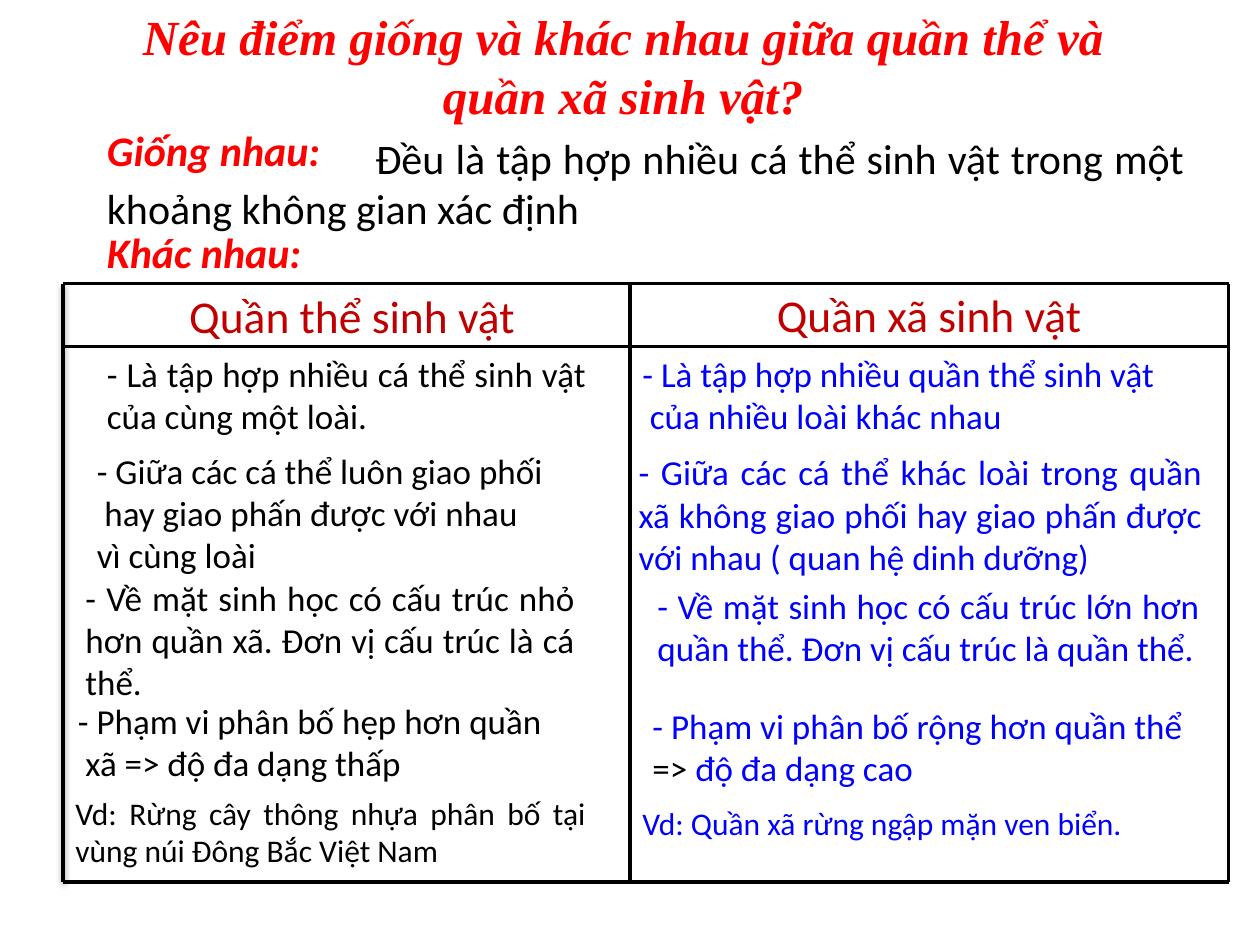
"""Build a slide comparing populations and communities in ecology."""
from lxml import etree
from pptx import Presentation
from pptx.dml.color import RGBColor
from pptx.enum.shapes import MSO_CONNECTOR
from pptx.enum.text import MSO_ANCHOR, MSO_AUTO_SIZE, PP_ALIGN
from pptx.oxml import parse_xml
from pptx.oxml.ns import nsdecls, qn
from pptx.util import Inches, Pt

THEME = {
    "red": RGBColor(0xFF, 0x00, 0x00),
    "heading": RGBColor(0xC0, 0x00, 0x00),
    "blue": RGBColor(0x00, 0x00, 0xFF),
    "black": RGBColor(0x00, 0x00, 0x00),
    "title_font": "Times New Roman",
    "body_font": "Calibri",
    "title_size": 28,
    "heading_size": 26,
    "lead_size": 24,
    "point_size": 20,
    "example_size": 18,
    "rule": 2.25,
    "shadow_rule": 2,
}
LEFT, CENTER, JUSTIFY = PP_ALIGN.LEFT, PP_ALIGN.CENTER, PP_ALIGN.JUSTIFY
LEAD_INDENT, HANG = 2.13, 0.06

TITLE = "Nêu điểm giống và khác nhau giữa quần thể và quần xã sinh vật?"
TITLE_BOX = (0.75, 0, 8.39, 1.01)

LEADS = [
    ((0.75, 1, 8.75, 0.9), JUSTIFY, "black", False, LEAD_INDENT,
     "Đều là tập hợp nhiều cá thể sinh vật trong một khoảng không gian xác định"),
    ((0.75, 1.75, 2.25, 0.5), JUSTIFY, "red", True, 0, "Khác nhau:"),
    ((0.75, 0.94, 2.25, 0.51), LEFT, "red", True, 0, "Giống nhau:"),
]
HEADINGS = [
    ((0.92, 2.24, 3.75, 0.53), "Quần thể sinh vật"),
    ((5.75, 2.23, 3.25, 0.53), "Quần xã sinh vật"),
]
POPULATION = [
    ((0.75, 2.75, 4, 0.77), JUSTIFY, "point_size",
     [(0, "- Là tập hợp nhiều cá thể sinh vật của cùng một loài.")]),
    ((0.67, 3.52, 4.22, 1.3), JUSTIFY, "point_size",
     [(0, "- Giữa các cá thể luôn giao phối"),
      (HANG, "hay giao phấn được với nhau"),
      (0, "vì cùng loài")]),
    ((0.58, 4.53, 4.08, 0.77), JUSTIFY, "point_size",
     [(0, "- Về mặt sinh học có cấu trúc nhỏ hơn quần xã. Đơn vị cấu trúc là cá thể.")]),
    ((0.52, 5.5, 4.02, 0.77), LEFT, "point_size",
     [(0, "- Phạm vi phân bố hẹp hơn quần"), (HANG, "xã => độ đa dạng thấp")]),
    ((0.5, 6.25, 4.25, 0.7), JUSTIFY, "example_size",
     [(0, "Vd: Rừng cây thông nhựa phân bố tại vùng núi Đông Bắc Việt Nam")]),
]
COMMUNITY = [
    ((5, 2.75, 4.75, 0.77), JUSTIFY, "point_size",
     [(0, "- Là tập hợp nhiều quần thể sinh vật"), (HANG, "của nhiều loài khác nhau")]),
    ((4.97, 3.53, 4.67, 1.19), JUSTIFY, "point_size",
     [(0, "- Giữa các cá thể khác loài trong quần xã không giao phối "
          "hay giao phấn được với nhau ( quan hệ dinh dưỡng)")]),
    ((5.12, 4.59, 4.5, 0.77), JUSTIFY, "point_size",
     [(0, "- Về mặt sinh học có cấu trúc lớn hơn quần thể. Đơn vị cấu trúc là quần thể.")]),
    ((5.08, 5.54, 4.5, 0.77), LEFT, "point_size",
     [(0, [("- Phạm vi phân bố rộng hơn quần thể ", "blue"), ("=> ", "black"),
           ("độ đa dạng cao", "blue")])]),
    ((5, 6.33, 4.5, 0.5), LEFT, "example_size",
     [(0, "Vd: Quần xã rừng ngập mặn ven biển.")]),
]
GRID_COLUMNS = [0.5, 5, 9.75]
GRID_ROWS = [2.25, 2.75, 7]


def write(frame, lines, align, color, size, font="body_font", strong=False):
    """Fill a text frame with (indent, text or coloured runs) lines."""
    settings = {"word_wrap": True, "auto_size": MSO_AUTO_SIZE.NONE,
                "vertical_anchor": MSO_ANCHOR.TOP}
    for name, value in settings.items():
        setattr(frame, name, value)
    for index, (indent, content) in enumerate(lines):
        paragraph = frame.add_paragraph() if index else frame.paragraphs[0]
        paragraph.alignment = align
        if indent:
            paragraph._p.get_or_add_pPr().set("indent", str(Inches(indent)))
        runs = [(content, color)] if isinstance(content, str) else content
        for text, run_color in runs:
            run = paragraph.add_run()
            run.text = text
            formats = {"name": THEME[font], "size": Pt(THEME[size]),
                       "bold": strong, "italic": strong}
            for name, value in formats.items():
                setattr(run.font, name, value)
            run.font.color.rgb = THEME[run_color]


def add_text(slide, box, *args, **formats):
    """Add a text box and fill it."""
    write(slide.shapes.add_textbox(*map(Inches, box)).text_frame, *args, **formats)


def add_rule(slide, start, end, shadow=False):
    """Draw a black grid line, with a soft shadow if asked."""
    rule = slide.shapes.add_connector(MSO_CONNECTOR.STRAIGHT, *map(Inches, start + end))
    rule.line.color.rgb = THEME["black"]
    rule.line.width = Pt(THEME["shadow_rule" if shadow else "rule"])
    effects = etree.SubElement(rule._element.spPr, qn("a:effectLst"))
    if shadow:
        effects.append(parse_xml(
            f'<a:outerShdw {nsdecls("a")} blurRad="{Pt(3.1)}" dist="{Pt(1.6)}" '
            'dir="5400000" rotWithShape="0"><a:srgbClr val="000000">'
            '<a:alpha val="38000"/></a:srgbClr></a:outerShdw>'))


def main():
    """Compose and save the slide."""
    deck = Presentation()
    deck.slide_width, deck.slide_height = Inches(10), Inches(7.5)
    slide = deck.slides.add_slide(deck.slide_layouts[5])

    title = slide.shapes.title
    for name, value in zip(("left", "top", "width", "height"), TITLE_BOX):
        setattr(title, name, Inches(value))
    write(title.text_frame, [(0, TITLE)], CENTER, "red", "title_size",
          font="title_font", strong=True)

    for box, align, color, strong, indent, text in LEADS:
        add_text(slide, box, [(indent, text)], align, color, "lead_size", strong=strong)
    for box, text in HEADINGS:
        add_text(slide, box, [(0, text)], CENTER, "heading", "heading_size")
    for points, color in ((POPULATION, "black"), (COMMUNITY, "blue")):
        for box, align, size, lines in points:
            add_text(slide, box, lines, align, color, size)

    for y in GRID_ROWS:
        add_rule(slide, (GRID_COLUMNS[0], y), (GRID_COLUMNS[-1], y))
    for x in GRID_COLUMNS:
        add_rule(slide, (x, GRID_ROWS[0]), (x, GRID_ROWS[-1]), shadow=x == GRID_COLUMNS[0])

    deck.save("out.pptx")


if __name__ == "__main__":
    main()
